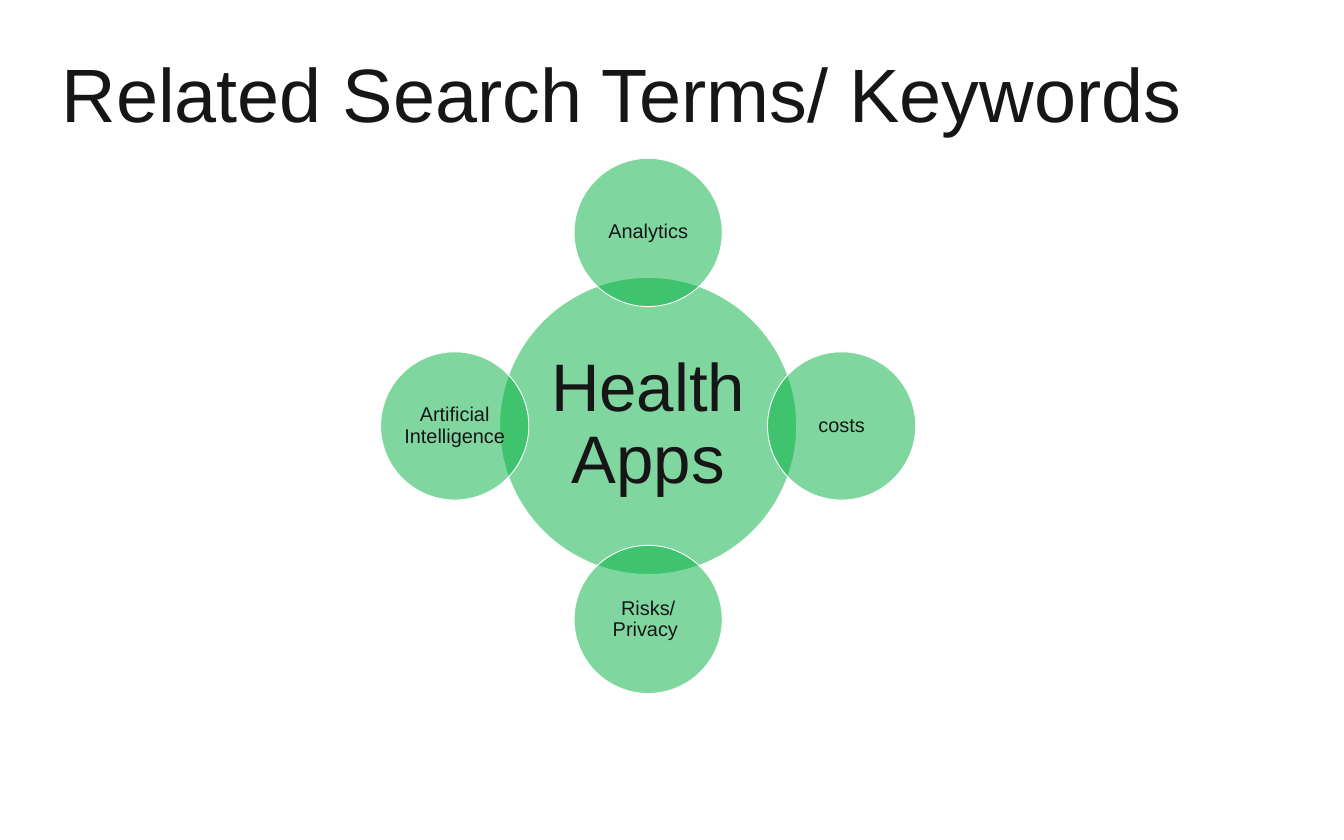
from pptx import Presentation
from pptx.dml.color import RGBColor
from pptx.enum import shapes, text
from pptx.oxml.ns import qn
from pptx.util import Cm, Pt
from lxml import etree

COLORS = {"green": "00B140", "white": "FFFFFF", "ink": "171616"}


def set_text(tf, content, size, inset_x, inset_y):
    tf.margin_left = tf.margin_right = Cm(inset_x)
    tf.margin_top = tf.margin_bottom = Cm(inset_y)
    p = tf.paragraphs[0]
    p.text = content
    p.alignment = text.PP_ALIGN.CENTER
    p.font.name = "Arial"
    p.font.size = Pt(size)
    p.font.color.rgb = RGBColor.from_string(COLORS["ink"])
    return p


prs = Presentation()
prs.slide_width, prs.slide_height = Cm(45.16), Cm(28.22)
s = prs.slides.add_slide(prs.slide_layouts[6])

# Radial diagram: hub first, then satellites clockwise from the top
center_x, center_y = 21.78, 14.31
hub, satellite, reach = 9.98, 4.98, 6.5
circles = [
    ("Health Apps", 0, 0, hub, 64, 0.23),
    ("Analytics", 0, -1, satellite, 19, 0.06),
    ("costs", 1, 0, satellite, 19, 0.06),
    ("Risks/ Privacy ", 0, 1, satellite, 19, 0.06),
    ("Artificial Intelligence", -1, 0, satellite, 19, 0.06),
]
for label, dx, dy, diameter, size, inset in circles:
    left = center_x + dx * reach - diameter / 2
    top = center_y + dy * reach - diameter / 2
    sp = s.shapes.add_shape(shapes.MSO_SHAPE.OVAL, Cm(left), Cm(top),
                            Cm(diameter), Cm(diameter))
    sp.shadow.inherit = False
    sp.fill.solid()
    sp.fill.fore_color.rgb = RGBColor.from_string(COLORS["green"])
    # Half-transparent fill, so overlaps show darker
    color = sp._element.spPr.find(qn("a:solidFill")).find(qn("a:srgbClr"))
    etree.SubElement(color, qn("a:alpha"), val="50000")
    sp.line.color.rgb = RGBColor.from_string(COLORS["white"])
    sp.line.width = Pt(0.85)
    tf = sp.text_frame
    tf.word_wrap = True
    tf.vertical_anchor = text.MSO_ANCHOR.MIDDLE
    p = set_text(tf, label, size, inset, inset)
    p.line_spacing = 0.9

# Title
title = s.shapes.add_textbox(Cm(1.55), Cm(1.4), Cm(38.68), Cm(3.43))
title.text_frame.word_wrap = False
set_text(title.text_frame, "Related Search Terms/ Keywords", 72, 0.33, 0.18)

prs.save("out.pptx")
